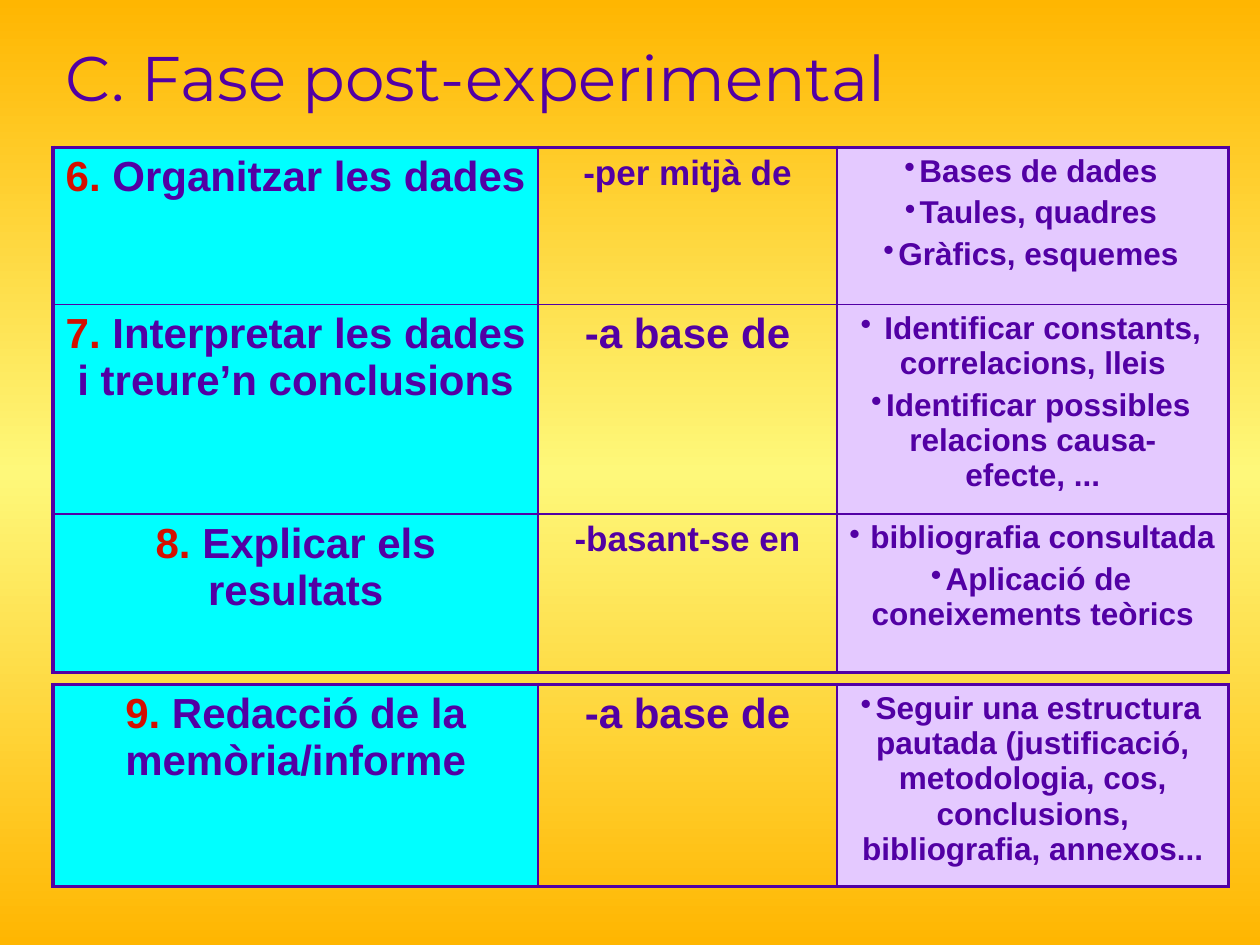
import copy

import lxml.etree
import pptx
import pptx.dml.color
import pptx.enum.text
import pptx.oxml.ns
import pptx.util

Cm = pptx.util.Cm
Pt = pptx.util.Pt
RGBColor = pptx.dml.color.RGBColor
qn = pptx.oxml.ns.qn

PURPLE = RGBColor(0x52, 0x00, 0xA4)
RED = RGBColor(0xD4, 0x0F, 0x00)
CYAN = RGBColor(0x00, 0xFF, 0xFF)
LILAC = RGBColor(0xE4, 0xC9, 0xFF)
ORANGE = RGBColor(0xFF, 0xB6, 0x01)
YELLOW = RGBColor(0xFE, 0xF8, 0x7A)

LEFT = Cm(1.07)
COLUMN_WIDTHS = [Cm(9.78), Cm(6.02), Cm(7.9)]
THICK, THIN = Pt(2.25), Pt(1)

# Each phase: number, task, link words, link size, means
EXPERIMENT_PHASES = [
    ("6.", " Organitzar les dades", "-per mitjà de", 20,
     ["Bases de dades", "Taules, quadres", "Gràfics, esquemes"]),
    ("7.", " Interpretar les dades i treure’n conclusions", "-a base de", 24,
     [" Identificar constants, correlacions, lleis",
      "Identificar possibles relacions causa-efecte, ..."]),
    ("8.", " Explicar els resultats", "-basant-se en", 20,
     [" bibliografia consultada", "Aplicació de coneixements teòrics"]),
]
REPORT_PHASES = [
    ("9.", " Redacció de la memòria/informe", "-a base de", 24,
     ["Seguir una estructura pautada (justificació, metodologia, cos, "
      "conclusions, bibliografia, annexos..."]),
]


def add_text(paragraph, text, size=24, color=PURPLE, font="Arial", bold=True,
             align=pptx.enum.text.PP_ALIGN.CENTER):
    paragraph.alignment = align
    run = paragraph.add_run()
    run.text = text
    run.font.name = font
    run.font.size = Pt(size)
    run.font.bold = bold
    run.font.color.rgb = color


def add_child(parent, tag, **attributes):
    child = lxml.etree.SubElement(parent, qn(tag))
    for name, value in attributes.items():
        child.set(name, str(value))
    return child


def set_bullet(paragraph):
    properties = paragraph._p.get_or_add_pPr()
    properties.set("marL", "0")
    properties.set("indent", str(-Cm(0.3)))
    bullet_color = add_child(properties, "a:buClr")
    add_child(bullet_color, "a:srgbClr", val=PURPLE)
    add_child(properties, "a:buChar", char="•")


def set_borders(cell, **widths):
    """Draw the sides L, R, T and B, which must be given in that order."""
    properties = cell._tc.get_or_add_tcPr()
    for side, width in widths.items():
        line = add_child(properties, "a:ln" + side, w=int(width))
        solid = add_child(line, "a:solidFill")
        add_child(solid, "a:srgbClr", val=PURPLE)


def set_fill(cell, color):
    if color is None:
        cell.fill.background()
    else:
        cell.fill.solid()
        cell.fill.fore_color.rgb = color


def fill_phase(cells, number, task, link, link_size, means):
    task_cell, link_cell, means_cell = cells
    heading = task_cell.text_frame.paragraphs[0]
    add_text(heading, number, color=RED)
    add_text(heading, task)
    add_text(link_cell.text_frame.paragraphs[0], link, size=link_size)
    frame = means_cell.text_frame
    for index, item in enumerate(means):
        paragraph = frame.add_paragraph() if index else frame.paragraphs[0]
        set_bullet(paragraph)
        if index:
            paragraph.space_before = Pt(3.6)
        add_text(paragraph, item, size=18)


def add_phase_table(slide, top, row_heights, phases):
    table = slide.shapes.add_table(
        len(phases), len(COLUMN_WIDTHS), LEFT, top,
        sum(COLUMN_WIDTHS), sum(row_heights)).table
    table.first_row = False
    table.horz_banding = False
    for column, width in zip(table.columns, COLUMN_WIDTHS):
        column.width = width
    last_row, last_column = len(phases) - 1, len(COLUMN_WIDTHS) - 1
    for r, (row, height, phase) in enumerate(
            zip(table.rows, row_heights, phases)):
        row.height = height
        cells = list(row.cells)
        for c, (cell, color) in enumerate(zip(cells, [CYAN, None, LILAC])):
            set_borders(cell,
                        L=THICK if c == 0 else THIN,
                        R=THICK if c == last_column else THIN,
                        T=THICK if r == 0 else THIN,
                        B=THICK if r == last_row else THIN)
            set_fill(cell, color)
        fill_phase(cells, *phase)


def set_background(slide):
    fill = slide.background.fill
    fill.gradient()
    fill.gradient_angle = 270
    stop_list = slide._element.find(".//" + qn("a:gsLst"))
    stop_list.insert(1, copy.deepcopy(stop_list[0]))
    for stop, position, color in zip(
            fill.gradient_stops, [0, 0.5, 1], [ORANGE, YELLOW, ORANGE]):
        stop.position = position
        stop.color.rgb = color


def set_title(slide, text):
    title = slide.shapes.title
    title.left, title.top = LEFT, Cm(0.64)
    title.width, title.height = Cm(23.5), Cm(1.78)
    frame = title.text_frame
    frame.word_wrap = True
    frame.auto_size = pptx.enum.text.MSO_AUTO_SIZE.SHAPE_TO_FIT_TEXT
    frame.vertical_anchor = pptx.enum.text.MSO_ANCHOR.TOP
    add_text(frame.paragraphs[0], text, size=36, font="Montserrat",
             bold=False, align=pptx.enum.text.PP_ALIGN.LEFT)


def main():
    presentation = pptx.Presentation()
    presentation.slide_width = Cm(25.4)
    presentation.slide_height = Cm(19.05)
    slide = presentation.slides.add_slide(presentation.slide_layouts[5])
    set_background(slide)
    set_title(slide, "C. Fase post-experimental")
    add_phase_table(slide, Cm(2.97), [Cm(3.17), Cm(4.22), Cm(3.2)],
                    EXPERIMENT_PHASES)
    add_phase_table(slide, Cm(13.8), [Cm(4.06)], REPORT_PHASES)
    presentation.save("out.pptx")


if __name__ == "__main__":
    main()
